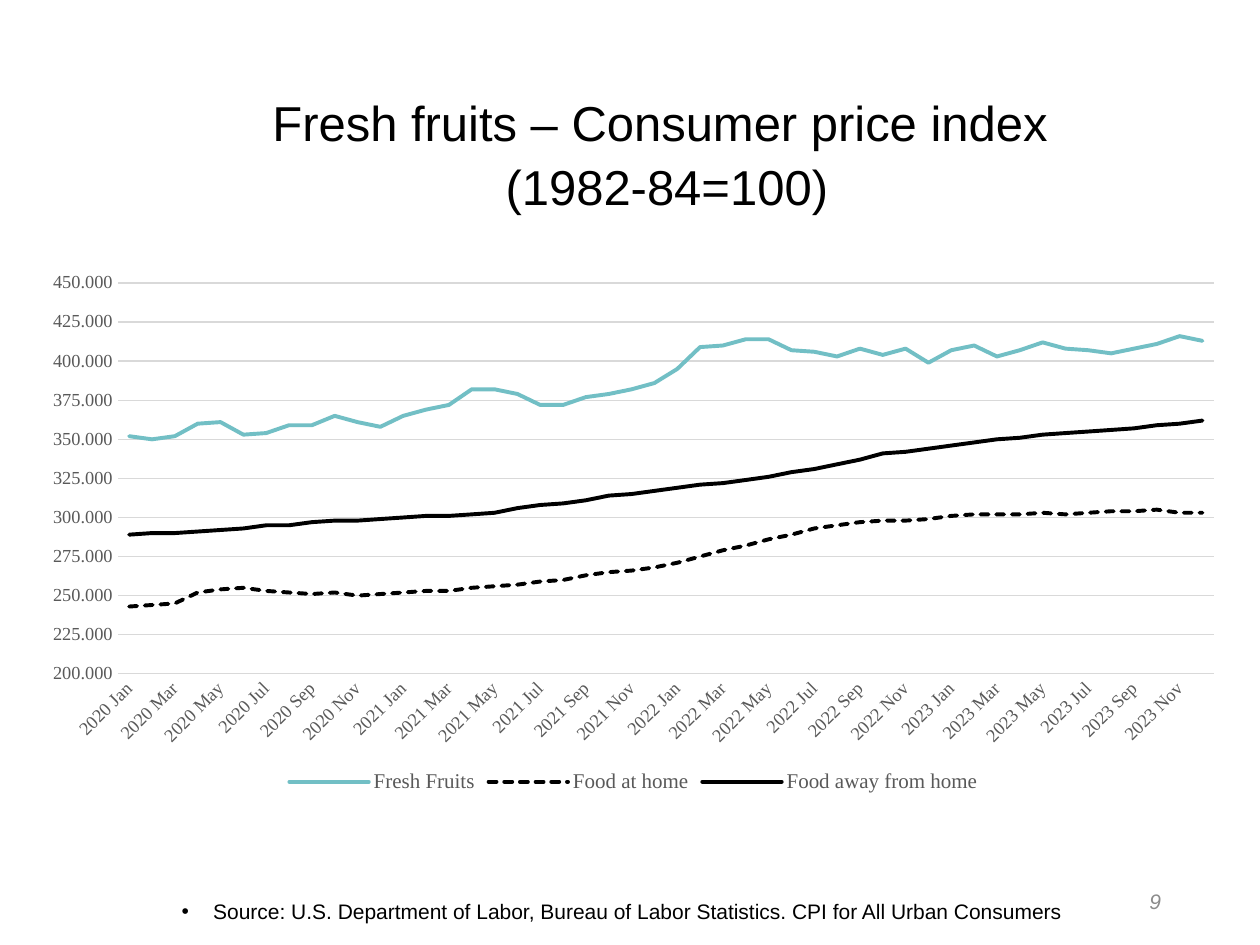
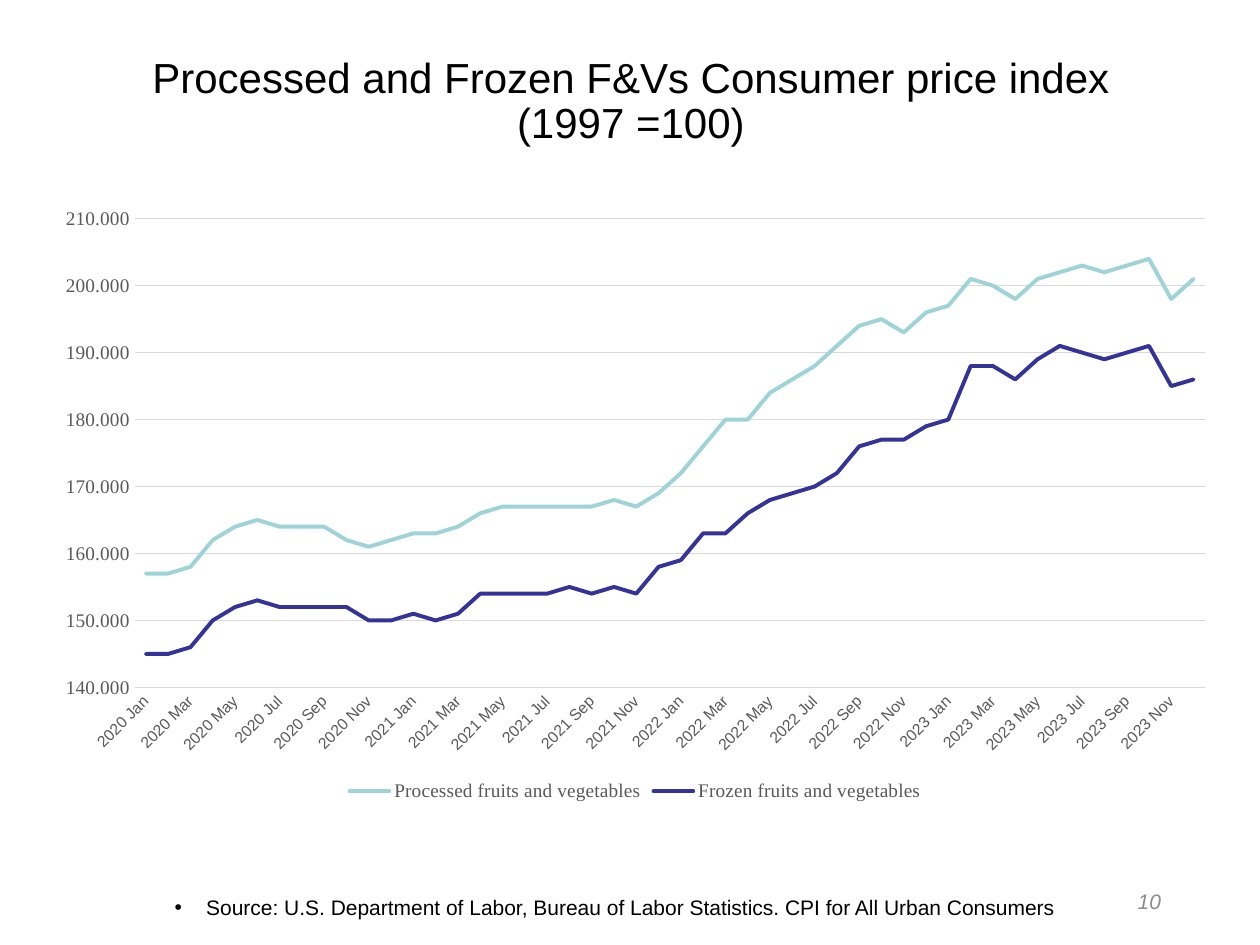
from itertools import product

from pptx import Presentation
from pptx.chart.data import CategoryChartData
from pptx.dml.color import RGBColor
from pptx.enum.chart import XL_CHART_TYPE, XL_LEGEND_POSITION, XL_TICK_MARK
from pptx.enum.dml import MSO_LINE
from pptx.enum.text import MSO_ANCHOR, MSO_AUTO_SIZE, PP_ALIGN
from pptx.oxml.xmlchemy import OxmlElement
from pptx.util import Pt

COLORS = {
    "text": "000000",
    "number": "8C8C8C",
    "label": "595959",
    "grid": "D9D9D9",
    "fresh": "72BFC5",
    "processed": "9ED3D7",
    "frozen": "333399",
}
SANS, SERIF = "Arial", "Times New Roman"
SOURCE = ("Source: U.S. Department of Labor, Bureau of Labor Statistics. "
          "CPI for All Urban Consumers")
MONTH_NAMES = "Jan Feb Mar Apr May Jun Jul Aug Sep Oct Nov Dec".split()
MONTHS = [f"{year} {month}" for year, month in product(range(2020, 2024), MONTH_NAMES)]

FRESH_FRUITS = [
    352, 350, 352, 360, 361, 353, 354, 359, 359, 365, 361, 358,
    365, 369, 372, 382, 382, 379, 372, 372, 377, 379, 382, 386,
    395, 409, 410, 414, 414, 407, 406, 403, 408, 404, 408, 399,
    407, 410, 403, 407, 412, 408, 407, 405, 408, 411, 416, 413]
FOOD_AT_HOME = [
    243, 244, 245, 252, 254, 255, 253, 252, 251, 252, 250, 251,
    252, 253, 253, 255, 256, 257, 259, 260, 263, 265, 266, 268,
    271, 275, 279, 282, 286, 289, 293, 295, 297, 298, 298, 299,
    301, 302, 302, 302, 303, 302, 303, 304, 304, 305, 303, 303]
FOOD_AWAY = [
    289, 290, 290, 291, 292, 293, 295, 295, 297, 298, 298, 299,
    300, 301, 301, 302, 303, 306, 308, 309, 311, 314, 315, 317,
    319, 321, 322, 324, 326, 329, 331, 334, 337, 341, 342, 344,
    346, 348, 350, 351, 353, 354, 355, 356, 357, 359, 360, 362]
PROCESSED = [
    157, 157, 158, 162, 164, 165, 164, 164, 164, 162, 161, 162,
    163, 163, 164, 166, 167, 167, 167, 167, 167, 168, 167, 169,
    172, 176, 180, 180, 184, 186, 188, 191, 194, 195, 193, 196,
    197, 201, 200, 198, 201, 202, 203, 202, 203, 204, 198, 201]
FROZEN = [
    145, 145, 146, 150, 152, 153, 152, 152, 152, 152, 150, 150,
    151, 150, 151, 154, 154, 154, 154, 155, 154, 155, 154, 158,
    159, 163, 163, 166, 168, 169, 170, 172, 176, 177, 177, 179,
    180, 188, 188, 186, 189, 191, 190, 189, 190, 191, 185, 186]

PRICE_SLIDES = [
    {
        "number": 9,
        "title": ["Fresh fruits – Consumer price index ", "(1982-84=100)"],
        "title_size": 28,
        "title_box": (60, 46, 642, 88),
        "source_box": (62, 503, 601, 37),
        "chart_box": (16.5, 150, 691, 306),
        "scale": {"minimum_scale": 200, "maximum_scale": 450, "major_unit": 25},
        "month_font": (SERIF, 10.5),
        "value_font": (SERIF, 10.5),
        "legend_font": (SERIF, 12),
        "series": [
            ("Fresh Fruits", FRESH_FRUITS, "fresh", None),
            ("Food at home", FOOD_AT_HOME, "text", MSO_LINE.SQUARE_DOT),
            ("Food away from home", FOOD_AWAY, "text", None),
        ],
    },
    {
        "number": 10,
        "title": ["Processed and Frozen F&Vs Consumer price index (1997 =100)"],
        "title_size": 24,
        "title_box": (60, 14.5, 601, 88),
        "source_box": (58, 500.5, 601, 37),
        "chart_box": (24, 112, 678, 349),
        "scale": {"minimum_scale": 140, "maximum_scale": 210, "major_unit": 10},
        "month_font": (SANS, 9),
        "value_font": (SERIF, 11),
        "legend_font": (SERIF, 11),
        "series": [
            ("Processed fruits and vegetables", PROCESSED, "processed", None),
            ("Frozen fruits and vegetables", FROZEN, "frozen", None),
        ],
    },
]


def rgb(role):
    return RGBColor.from_string(COLORS[role])


def apply_format(target, **values):
    for attribute, value in values.items():
        setattr(target, attribute, value)


def format_font(font, face, size, role, italic=False):
    apply_format(font, name=face, size=Pt(size), italic=italic, bold=False)
    font.color.rgb = rgb(role)


def place(shape, box):
    apply_format(shape, **dict(zip(("left", "top", "width", "height"), map(Pt, box))))


def fill_text(shape, box, lines, size, role="text", align=PP_ALIGN.CENTER,
              spacing=0.9, italic=False):
    place(shape, box)
    frame = shape.text_frame
    apply_format(frame, word_wrap=True, auto_size=MSO_AUTO_SIZE.NONE,
                 vertical_anchor=MSO_ANCHOR.MIDDLE)
    frame.text = "\n".join(lines)
    for paragraph in frame.paragraphs:
        apply_format(paragraph, alignment=align, line_spacing=spacing,
                     space_before=Pt(0), space_after=Pt(6))
        format_font(paragraph.runs[0].font, SANS, size, role, italic)


def add_bullet(paragraph):
    """Hang a round bullet 18 points left of the text."""
    properties = paragraph._p.get_or_add_pPr()
    properties.set("marL", "0")
    properties.set("indent", str(-Pt(18)))
    bullet = OxmlElement("a:buChar")
    bullet.set("char", "•")
    properties.append(bullet)


def format_line(line, role, width):
    line.color.rgb = rgb(role)
    line.width = Pt(width)


def format_axes(chart, content):
    months, values = chart.category_axis, chart.value_axis
    for axis, font in ((months, content["month_font"]), (values, content["value_font"])):
        apply_format(axis, major_tick_mark=XL_TICK_MARK.NONE,
                     minor_tick_mark=XL_TICK_MARK.NONE)
        format_font(axis.tick_labels.font, *font, "label")

    months.has_major_gridlines = False
    format_line(months.format.line, "grid", 0.75)
    month_axis = months._element
    month_axis.xpath("c:txPr/a:bodyPr")[0].set("rot", str(-45 * 60000))
    skip = OxmlElement("c:tickLblSkip")
    skip.set("val", "2")
    month_axis.xpath("c:noMultiLvlLbl")[0].addprevious(skip)

    apply_format(values, has_major_gridlines=True, **content["scale"])
    apply_format(values.tick_labels, number_format="#0.000", number_format_is_linked=False)
    values.format.line.fill.background()
    format_line(values.major_gridlines.format.line, "grid", 0.75)


def add_price_chart(slide, content):
    prices = CategoryChartData(number_format="#0.000")
    prices.categories = MONTHS
    for name, index_values, *_ in content["series"]:
        prices.add_series(name, index_values)
    chart = slide.shapes.add_chart(
        XL_CHART_TYPE.LINE, *map(Pt, content["chart_box"]), prices).chart
    apply_format(chart, has_title=False, has_legend=True)
    format_font(chart.font, SANS, 10, "text")
    apply_format(chart.legend, position=XL_LEGEND_POSITION.BOTTOM, include_in_layout=False)
    format_font(chart.legend.font, *content["legend_font"], "label")
    format_axes(chart, content)

    plot = chart.plots[0]
    plot.vary_by_categories = False
    for series, (_, _, role, dash) in zip(plot.series, content["series"]):
        series.smooth = False
        format_line(series.format.line, role, 2.25)
        if dash:
            series.format.line.dash_style = dash
        series.format.line._ln.set("cap", "rnd")


def add_price_slide(deck, content):
    slide = deck.slides.add_slide(deck.slide_layouts[1])
    title, source = slide.placeholders
    fill_text(title, content["title_box"], content["title"], content["title_size"])
    fill_text(source, content["source_box"], [SOURCE], 12)
    add_bullet(source.text_frame.paragraphs[0])
    page_number = slide.shapes.add_textbox(0, 0, 0, 0)
    fill_text(page_number, (508.5, 500.5, 162, 29), [str(content["number"])], 12,
              "number", PP_ALIGN.RIGHT, 1.0, italic=True)
    add_price_chart(slide, content)


def main():
    deck = Presentation()
    apply_format(deck, slide_width=Pt(720), slide_height=Pt(540))
    for content in PRICE_SLIDES:
        add_price_slide(deck, content)
    deck.save("out.pptx")


if __name__ == "__main__":
    main()
